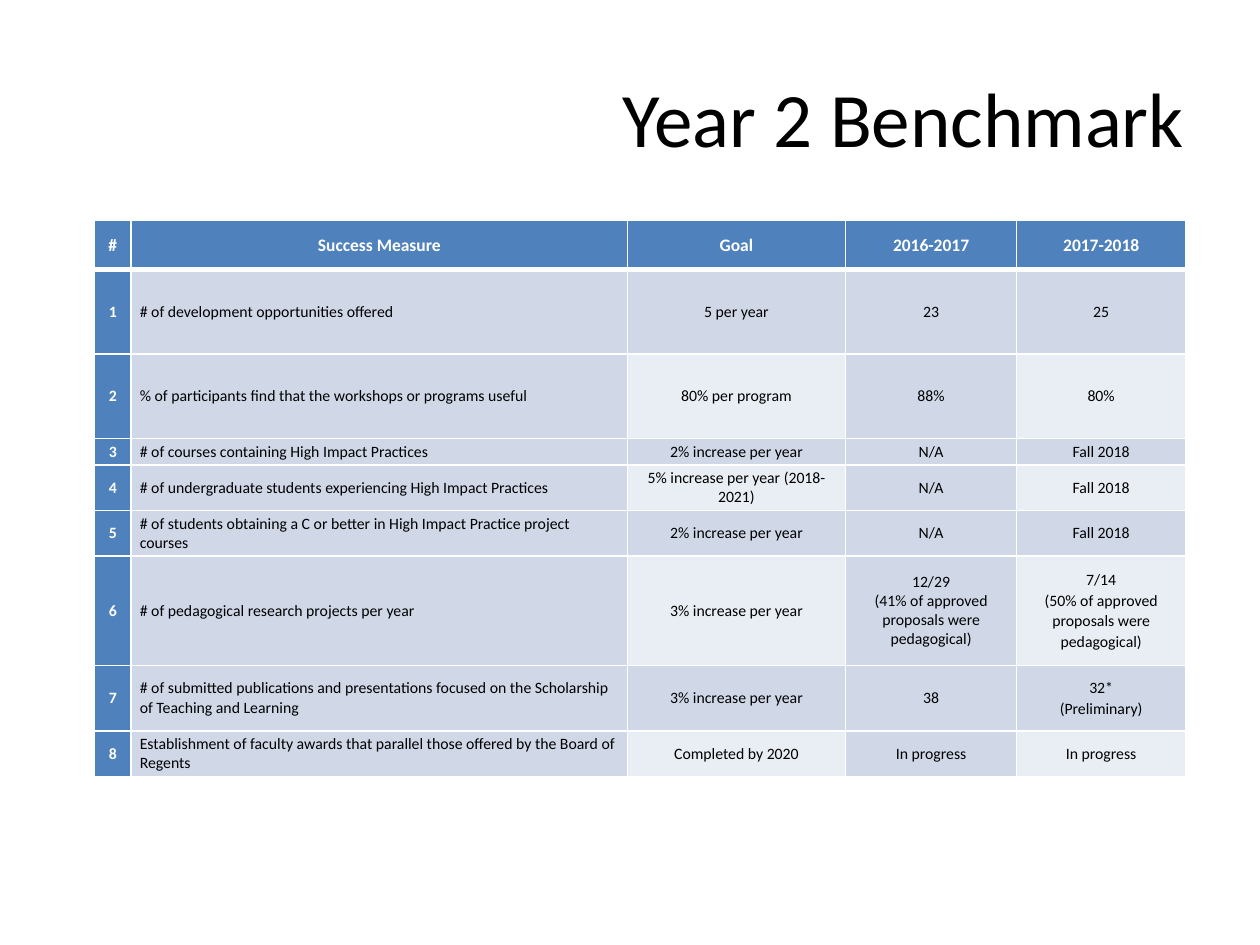
from dataclasses import dataclass

from lxml.etree import SubElement
from pptx import Presentation
from pptx.dml.color import RGBColor
from pptx.enum.text import MSO_ANCHOR, PP_ALIGN
from pptx.oxml.ns import qn
from pptx.util import Pt


@dataclass(frozen=True)
class Theme:
    font: str = "Calibri"
    title_size: float = 44
    header_size: float = 10
    body_size: float = 9
    black: str = "000000"
    white: str = "FFFFFF"
    header_fill: str = "4F81BD"
    band_dark: str = "D0D8E8"
    band_light: str = "E9EDF4"
    thin_border: float = 1
    thick_border: float = 3


THEME = Theme()

# Boxes: left, top, width, height in points
TITLE_BOX = (36, 21.6, 648, 90)
TABLE_BOX = (54, 126, 623.52, 317.52)
COLUMN_WIDTHS = (20.88, 283.68, 124.56, 97.92, 96.48)
ROW_HEIGHTS = (28.08, 48.24, 48.24, 15.12, 25.92, 25.92, 62.64, 37.44, 25.92)

HEADERS = ("#", "Success Measure", "Goal", "2016-2017", "2017-2018")
MEASURES = (
    ("# of development opportunities offered", "5 per year", "23", "25"),
    ("% of participants find that the workshops or programs useful",
     "80% per program", "88%", "80%"),
    ("# of courses containing High Impact Practices",
     "2% increase per year", "N/A", "Fall 2018"),
    ("# of undergraduate students experiencing High Impact Practices",
     "5% increase per year (2018-2021)", "N/A", "Fall 2018"),
    ("# of students obtaining a C or better in High Impact Practice project courses",
     "2% increase per year", "N/A", "Fall 2018"),
    ("# of pedagogical research projects per year", "3% increase per year",
     "12/29\n(41% of approved proposals were pedagogical)",
     "7/14\n(50% of approved proposals were pedagogical)"),
    ("# of submitted publications and presentations focused on the Scholarship "
     "of Teaching and Learning", "3% increase per year", "38", "32*\n(Preliminary)"),
    ("Establishment of faculty awards that parallel those offered by the Board of Regents",
     "Completed by 2020", "In progress", "In progress"),
)


def write_text(frame, text, size, color, align, bold=False, line_spacing=None):
    """Write each line of the text as one paragraph."""
    for index, line in enumerate(text.split("\n")):
        para = frame.add_paragraph() if index else frame.paragraphs[0]
        para.alignment = align
        if line_spacing:
            para.line_spacing = line_spacing
        span = para.add_run()
        span.text = line
        span.font.name = THEME.font
        span.font.size = Pt(size)
        span.font.bold = bold
        span.font.color.rgb = RGBColor.from_string(color)


def set_borders(cell, bottom, top):
    properties = cell._tc.get_or_add_tcPr()
    widths = {"L": THEME.thin_border, "R": THEME.thin_border, "T": top, "B": bottom}
    for side, width in widths.items():
        line = SubElement(properties, qn(f"a:ln{side}"), w=str(Pt(width)))
        fill = SubElement(line, qn("a:solidFill"))
        SubElement(fill, qn("a:srgbClr"), val=THEME.white)


def fill_cell(cell, text, row, column):
    is_header = row == 0
    is_heading = is_header or column == 0
    is_light = row % 2 == 0 and column in (2, 4)

    # Borders come before the fill in the cell properties
    set_borders(
        cell,
        bottom=THEME.thick_border if row == 0 else THEME.thin_border,
        top=THEME.thick_border if row == 1 else THEME.thin_border,
    )
    color = THEME.band_light if is_light else THEME.band_dark
    cell.fill.solid()
    cell.fill.fore_color.rgb = RGBColor.from_string(
        THEME.header_fill if is_heading else color)

    cell.vertical_anchor = MSO_ANCHOR.MIDDLE
    cell.margin_left = cell.margin_right = Pt(5.04)
    cell.margin_top = cell.margin_bottom = Pt(2.16)
    write_text(
        cell.text_frame,
        text,
        THEME.header_size if is_header else THEME.body_size,
        THEME.white if is_heading else THEME.black,
        PP_ALIGN.LEFT if column == 1 and not is_header else PP_ALIGN.CENTER,
        bold=is_heading,
        line_spacing=1.07 if column == 4 and "\n" in text else None,
    )


def add_title(page, box, text):
    frame = page.shapes.add_textbox(*map(Pt, box)).text_frame
    frame.word_wrap = True
    frame.vertical_anchor = MSO_ANCHOR.MIDDLE
    write_text(frame, text, THEME.title_size, THEME.black, PP_ALIGN.RIGHT)


def add_benchmark_table(page, box):
    rows = [HEADERS] + [(str(number), *measure)
                        for number, measure in enumerate(MEASURES, 1)]
    table = page.shapes.add_table(len(rows), len(HEADERS), *map(Pt, box)).table
    table.first_col = True
    for column, width in zip(table.columns, COLUMN_WIDTHS):
        column.width = Pt(width)
    for row, height in zip(table.rows, ROW_HEIGHTS):
        row.height = Pt(height)
    for row, texts in enumerate(rows):
        for column, text in enumerate(texts):
            fill_cell(table.cell(row, column), text, row, column)


def main():
    deck = Presentation()
    deck.slide_width, deck.slide_height = Pt(720), Pt(540)
    page = deck.slides.add_slide(deck.slide_layouts[6])
    add_title(page, TITLE_BOX, "Year 2 Benchmark")
    add_benchmark_table(page, TABLE_BOX)
    deck.save("out.pptx")


if __name__ == "__main__":
    main()
